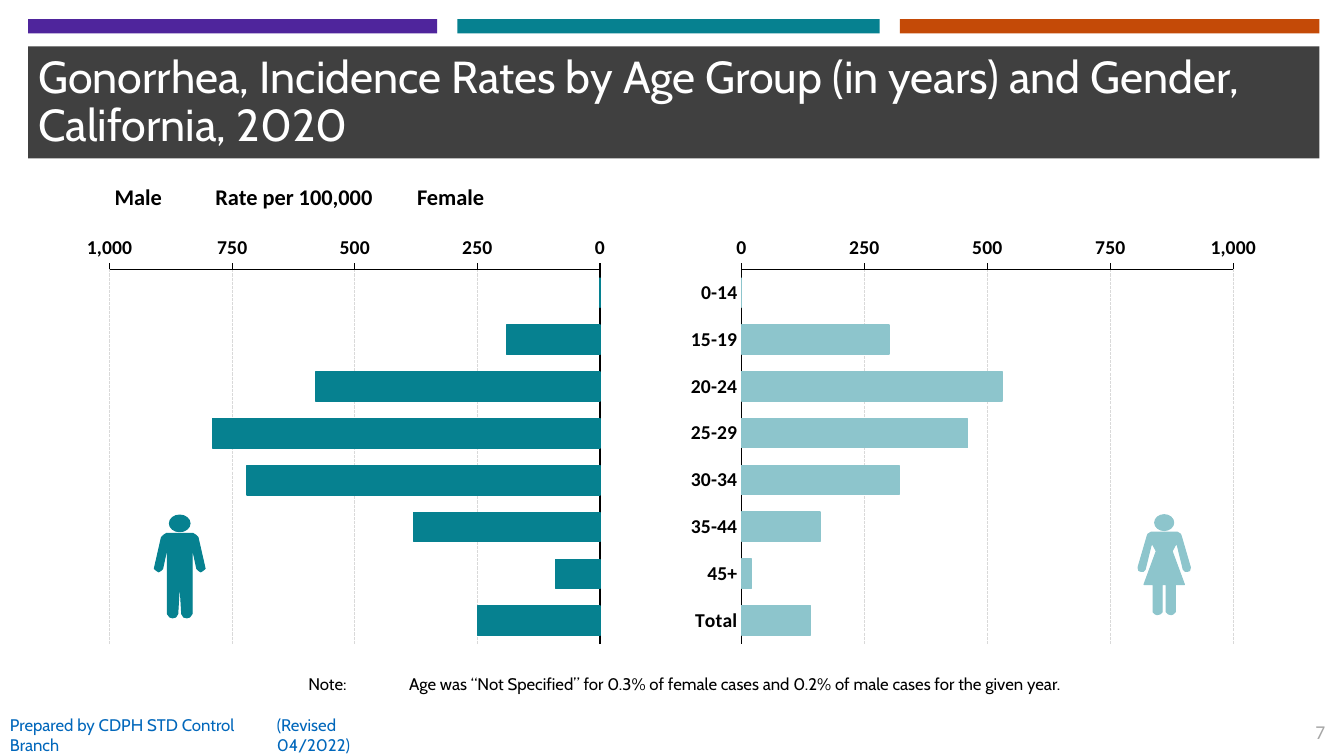
"""Build a slide of gonorrhea rates by age group and gender as paired bar charts."""
import math

from pptx import Presentation
from pptx import util as u
from pptx.chart import data
from pptx.dml.color import RGBColor
from pptx.enum import chart as ch, dml, shapes, text
from pptx.oxml import parse_xml
from pptx.oxml.ns import nsdecls

PURPLE = RGBColor(0x4F, 0x25, 0x9C)
TEAL = RGBColor(0x06, 0x81, 0x90)
ORANGE = RGBColor(0xC4, 0x4A, 0x07)
PALE_TEAL = RGBColor(0x8D, 0xC5, 0xCC)
CHARCOAL = RGBColor(0x40, 0x40, 0x40)
BLUE = RGBColor(0x01, 0x67, 0xBB)
GREY = RGBColor(0xA6, 0xA6, 0xA6)
GRID = RGBColor(0xD9, 0xD9, 0xD9)
BLACK = RGBColor(0, 0, 0)
WHITE = RGBColor(0xFF, 0xFF, 0xFF)

TAB = str(u.Cm(2.54))
AGES = ("0-14", "15-19", "20-24", "25-29", "30-34", "35-44", "45+", "Total")
MALE_RATES = (0, 190, 580, 790, 720, 380, 90, 250)
FEMALE_RATES = (0, 300, 530, 460, 320, 160, 20, 140)
MAN_HALF = ((.33, 0), (.41, .05), (.46, .1), (.64, .89), (.58, .94), (.53, .97),
            (.48, .94), (.43, .89), (.31, .33), (.31, 2.03), (.25, 2.11),
            (.18, 2.13), (.1, 2.11), (.05, 2.03), (0, 1.17))
WOMAN_HALF = ((.33, 0), (.41, .05), (.43, .1), (.66, .89), (.64, .97), (.58, .99),
              (.53, .99), (.48, .94), (.33, .33), (.3, .3), (.28, .33), (.2, .48),
              (.51, 1.32), (.28, 1.32), (.28, 2.01), (.23, 2.06), (.18, 2.08),
              (.1, 2.06), (.05, 2.01), (.05, 1.32))


def style_font(font, size, name="Calibri", color=BLACK, bold=False):
    font.size, font.name, font.bold = u.Pt(size), name, bold
    font.color.rgb = color


def write(tf, content, align=text.PP_ALIGN.LEFT, spacing=None,
          anchor=text.MSO_ANCHOR.TOP, wrap=True, **font):
    tf.word_wrap, tf.vertical_anchor = wrap, anchor
    p = tf.paragraphs[0]
    p.alignment, p.line_spacing = align, spacing
    r = p.add_run()
    r.text = content
    style_font(r.font, **font)


class Slide:
    """Hold the slide and draw its elements in one style."""

    def __init__(self, prs):
        self.s = prs.slides.add_slide(prs.slide_layouts[5])
        levels = prs.element.xpath(".//p:defaultTextStyle/*[@defTabSz]")
        levels += prs.slide_master.element.xpath(".//p:otherStyle/*[@defTabSz]")
        for level in levels:
            level.set("defTabSz", TAB)

    def box(self, *at):
        return [u.Cm(v) for v in at]

    def paint(self, sp, color, outlined=False):
        sp.shadow.inherit = False
        sp.fill.solid()
        sp.fill.fore_color.rgb = color
        if outlined:
            sp.line.color.rgb = color
            sp.line.width = u.Pt(0)
        else:
            sp.line.fill.background()

    def bar(self, at, color):
        sp = self.s.shapes.add_shape(shapes.MSO_SHAPE.RECTANGLE, *self.box(*at))
        self.paint(sp, color)
        return sp

    def title(self, at, content, **fmt):
        sp = self.s.shapes.title
        sp.left, sp.top, sp.width, sp.height = self.box(*at)
        sp.text_frame.auto_size = text.MSO_AUTO_SIZE.NONE
        write(sp.text_frame, content, **fmt)

    def label(self, at, content, **fmt):
        tf = self.s.shapes.add_textbox(*self.box(*at)).text_frame
        write(tf, content, **fmt)
        if "\t" in content:
            tf.paragraphs[0]._p.get_or_add_pPr().set("defTabSz", TAB)

    def outline(self, points, color):
        points = [(u.Cm(x), u.Cm(y)) for x, y in points]
        fb = self.s.shapes.build_freeform(*points[0])
        fb.add_line_segments(points[1:], close=True)
        self.paint(fb.convert_to_shape(), color, outlined=True)

    def figure(self, cx, top, half, head_y, head_rx, head_ry, color):
        right = [(cx + x, top + y) for x, y in half]
        left = [(cx - x, top + y) for x, y in reversed(half)]
        self.outline(right + left, color)
        turns = [math.pi * i / 8 for i in range(16)]
        self.outline([(cx + head_rx * math.cos(a), head_y + head_ry * math.sin(a))
                      for a in turns], color)

    def axis_line(self, axis):
        axis.format.line.color.rgb = BLACK
        axis.format.line.width = u.Pt(1)

    def rate_chart(self, at, cats, rates, color, plot, mirrored=False):
        cd = data.CategoryChartData()
        cd.categories = cats
        cd.add_series("Series 1", rates)
        chart = self.s.shapes.add_chart(
            ch.XL_CHART_TYPE.BAR_CLUSTERED, *self.box(*at), cd).chart
        chart.has_legend = chart.has_title = False
        style_font(chart.font, 18, "Times New Roman", bold=True)

        bars = chart.plots[0]
        bars.gap_width, bars.vary_by_categories = 60, False
        series = bars.series[0]
        series.invert_if_negative = False
        series.format.fill.solid()
        series.format.fill.fore_color.rgb = color
        series.format.line.color.rgb = color
        series.format.line.width = u.Pt(1)

        ages, scale = chart.category_axis, chart.value_axis
        ages.reverse_order, scale.reverse_order = True, mirrored
        ages.major_tick_mark = ages.minor_tick_mark = ch.XL_TICK_MARK.NONE
        if mirrored:
            ages.tick_label_position = ch.XL_TICK_LABEL_POSITION.NONE
        scale.minimum_scale, scale.maximum_scale, scale.major_unit = 0, 1000, 250
        scale.major_tick_mark = ch.XL_TICK_MARK.OUTSIDE
        scale.minor_tick_mark = ch.XL_TICK_MARK.NONE
        scale.tick_labels.number_format = "#,##0"
        scale.tick_labels.number_format_is_linked = False
        for axis in (ages, scale):
            self.axis_line(axis)
            style_font(axis.tick_labels.font, 14, bold=True)
        grid = scale.major_gridlines.format.line
        grid.color.rgb, grid.width = GRID, u.Pt(.75)
        grid.dash_style = dml.MSO_LINE.SQUARE_DOT
        self.frame_chart(chart, plot)

    def frame_chart(self, chart, plot):
        fill = (f'<c:spPr {nsdecls("c", "a")}><a:solidFill><a:srgbClr val="{WHITE}"/>'
                '</a:solidFill><a:ln><a:noFill/></a:ln></c:spPr>')
        modes = "".join(f'<c:{k}Mode val="edge"/>' for k in "xy")
        sizes = "".join(f'<c:{k} val="{v}"/>' for k, v in zip("xywh", plot))
        layout = (f'<c:layout {nsdecls("c")}><c:manualLayout>'
                  f'<c:layoutTarget val="inner"/>{modes}{sizes}'
                  '</c:manualLayout></c:layout>')
        root = chart.element
        area = root.xpath("c:chart/c:plotArea")[0]
        for old in area.xpath("c:layout"):
            area.remove(old)
        area.insert(0, parse_xml(layout))
        area.append(parse_xml(fill))
        root.xpath("c:chart")[0].addnext(parse_xml(fill))


def main():
    prs = Presentation()
    prs.slide_width, prs.slide_height = u.Cm(33.87), u.Cm(19.05)
    s = Slide(prs)
    middle = text.MSO_ANCHOR.MIDDLE

    band = s.bar((.71, 1.17, 32.54, 2.82), CHARCOAL)
    s.s.shapes.title.element.addprevious(band.element)
    for left, width, color in ((.71, 10.31, PURPLE), (22.68, 10.57, ORANGE),
                               (11.53, 10.64, TEAL)):
        s.bar((left, .48, width, .36), color)
    s.title((.71, 1.19, 32.54, 2.82),
            "Gonorrhea, Incidence Rates by Age Group (in years) and Gender, "
            "California, 2020",
            size=32, name="Cabin", color=WHITE, spacing=.9, anchor=middle)

    s.label((2.64, 4.5, 28.96, .94), "Male\tRate per 100,000\tFemale",
            size=16, bold=True)
    s.rate_chart((1.27, 5.34, 15.27, 11.13), [str(i) for i in range(1, 9)],
                 MALE_RATES, TEAL, (.098, .13, .809, .849), mirrored=True)
    s.figure(4.53, 13.44, MAN_HALF, 13.19, .26, .21, TEAL)
    s.rate_chart((15.91, 5.33, 16.51, 11.13), AGES, FEMALE_RATES, PALE_TEAL,
                 (.168, .131, .751, .848))
    s.figure(29.34, 13.41, WOMAN_HALF, 13.17, .24, .2, PALE_TEAL)

    s.label((4.98, 16.84, 23.85, .76),
            "\tNote:\tAge was “Not Specified” for 0.3% of female cases "
            "and 0.2% of male cases for the given year.", size=12, name="Cabin")
    for left, width, content in ((0, 7.11, "Prepared by CDPH STD Control Branch"),
                                 (6.73, 3.81, "(Revised 04/2022)")):
        s.label((left, 18.01, width, 1.02), content,
                size=12, name="Cabin", color=BLUE, anchor=middle)
    s.label((32.56, 18.01, 1.09, .86), "7", size=14, color=GREY,
            align=text.PP_ALIGN.RIGHT, wrap=False)
    prs.save("out.pptx")


if __name__ == "__main__":
    main()
